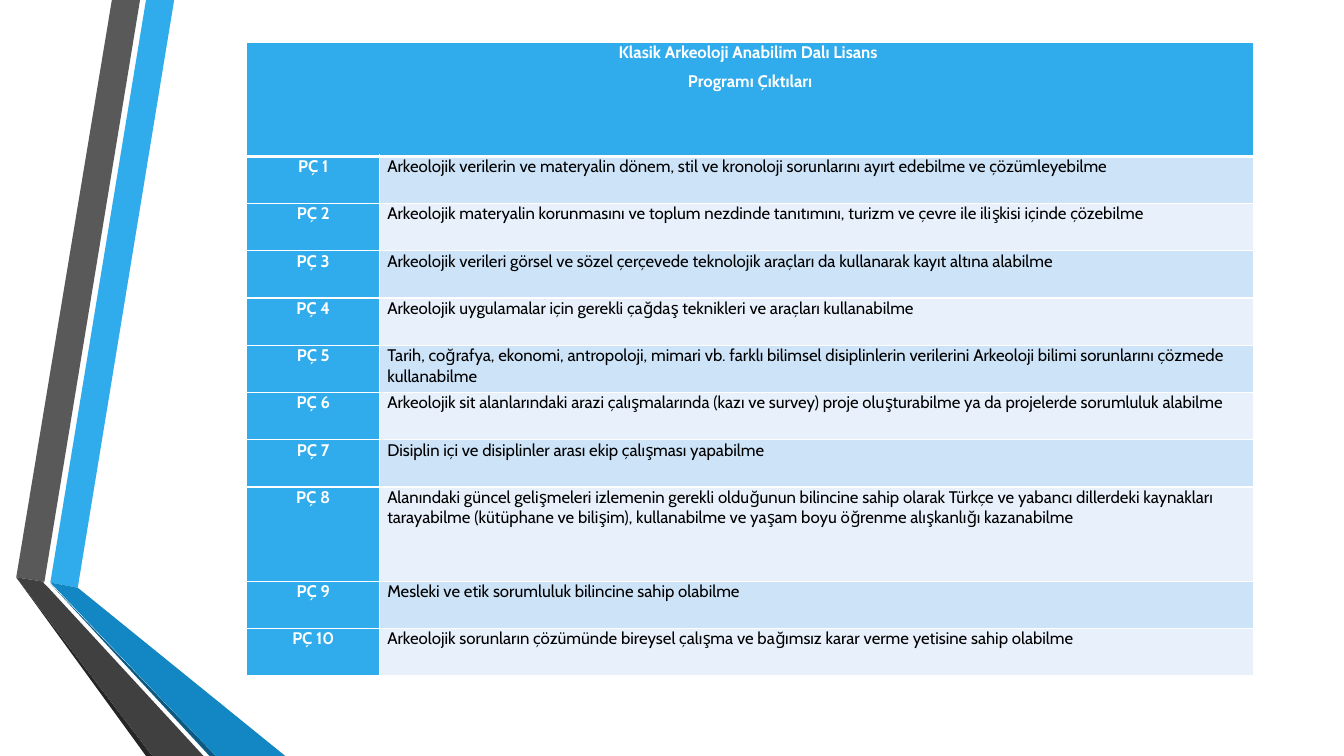
"""Build the slide listing the programme outcomes of the Classical Archaeology degree."""
from lxml.etree import SubElement
from pptx import Presentation
from pptx.dml.color import RGBColor
from pptx.enum.text import PP_ALIGN
from pptx.oxml.ns import qn
from pptx.util import Cm, Pt


def color(hex_text):
    return RGBColor.from_string(hex_text)


def fill_cell(cell, lines, fill, ink, bold, align, bottom=1):
    properties = cell._tc.get_or_add_tcPr()
    for side, width in {"lnL": 1, "lnR": 1, "lnT": 1, "lnB": bottom}.items():
        border = SubElement(properties, qn(f"a:{side}"), w=str(Pt(width)))
        SubElement(SubElement(border, qn("a:solidFill")), qn("a:srgbClr"), val="FFFFFF")
    cell.fill.solid()
    cell.fill.fore_color.rgb = color(fill)
    margins = {"margin_left": Cm(0.19), "margin_right": Cm(0.19), "margin_top": 0, "margin_bottom": 0}
    for name, value in margins.items():
        setattr(cell, name, value)
    cell.text = "\n".join(lines)
    for para in cell.text_frame.paragraphs:
        para.alignment = align
        para.space_after = Pt(6)
        for span in para.runs:
            for name, value in {"name": "Cabin", "size": Pt(12), "bold": bold}.items():
                setattr(span.font, name, value)
            span.font.color.rgb = color(ink)


deck = Presentation()
deck.slide_width, deck.slide_height = Cm(33.87), Cm(19.05)
page = deck.slides.add_slide(deck.slide_layouts[6])

ribbons = [
    ("30ACEC", [(1.27, 14.68), (1.96, 14.81), (4.39, 0), (3.68, 0)]),
    ("595959", [(3.53, 0), (2.82, 0), (0.41, 14.55), (1.12, 14.66)]),
    ("262626", [(0.41, 14.55), (3.68, 19.05), (3.84, 19.05)]),
    ("0C5A82", [(1.27, 14.71), (5.28, 19.05), (5.44, 19.05)]),
    ("1287C3", [(1.27, 14.68), (5.44, 19.05), (7.19, 19.05), (1.96, 14.81)]),
    ("404040", [(5.13, 19.05), (1.22, 14.81), (1.09, 14.68), (1.12, 14.66), (0.41, 14.55), (3.84, 19.05)]),
]
for fill, corners in ribbons:
    points = [(Cm(x), Cm(y)) for x, y in corners]
    builder = page.shapes.build_freeform(*points[0])
    builder.add_line_segments(points[1:], close=True)
    ribbon = builder.convert_to_shape()
    ribbon.shadow.inherit = False
    ribbon.fill.solid()
    ribbon.fill.fore_color.rgb = color(fill)
    ribbon.line.fill.background()

title = ["Klasik Arkeoloji Anabilim Dalı Lisans ", "Programı Çıktıları"]
outcomes = [
    "Arkeolojik verilerin ve materyalin dönem, stil ve kronoloji sorunlarını ayırt edebilme ve çözümleyebilme",
    "Arkeolojik materyalin korunmasını ve toplum nezdinde tanıtımını, turizm ve çevre ile ilişkisi içinde çözebilme",
    "Arkeolojik verileri görsel ve sözel çerçevede teknolojik araçları da kullanarak kayıt altına alabilme",
    "Arkeolojik uygulamalar için gerekli çağdaş teknikleri ve araçları kullanabilme",
    "Tarih, coğrafya, ekonomi, antropoloji, mimari vb. farklı bilimsel disiplinlerin verilerini "
    "Arkeoloji bilimi sorunlarını çözmede kullanabilme",
    "Arkeolojik sit alanlarındaki arazi çalışmalarında (kazı ve survey) proje oluşturabilme "
    "ya da projelerde sorumluluk alabilme",
    "Disiplin içi ve disiplinler arası ekip çalışması yapabilme",
    "Alanındaki güncel gelişmeleri izlemenin gerekli olduğunun bilincine sahip olarak Türkçe ve yabancı "
    "dillerdeki kaynakları tarayabilme (kütüphane ve bilişim), kullanabilme ve yaşam boyu öğrenme "
    "alışkanlığı kazanabilme",
    "Mesleki ve etik sorumluluk bilincine sahip olabilme",
    "Arkeolojik sorunların çözümünde bireysel çalışma ve bağımsız karar verme yetisine sahip olabilme",
]
heights = [2.87] + [1.19] * 7 + [2.38] + [1.19] * 2
table = page.shapes.add_table(len(heights), 2, Cm(6.22), Cm(1.07), Cm(25.37), Cm(sum(heights))).table
for column, width in zip(table.columns, (3.35, 22.02)):
    column.width = Cm(width)
for row, height in zip(table.rows, heights):
    row.height = Cm(height)

table.cell(0, 0).merge(table.cell(0, 1))
fill_cell(table.cell(0, 0), title, "30ACEC", "FFFFFF", True, PP_ALIGN.CENTER, bottom=3)
for number, outcome in enumerate(outcomes, 1):
    band = "CDE3F8" if number % 2 else "E8F1FB"
    align = PP_ALIGN.JUSTIFY if number == len(outcomes) else PP_ALIGN.LEFT
    fill_cell(table.cell(number, 0), [f"PÇ {number}"], "30ACEC", "FFFFFF", True, PP_ALIGN.CENTER)
    fill_cell(table.cell(number, 1), [outcome], band, "000000", False, align)

deck.save("out.pptx")
